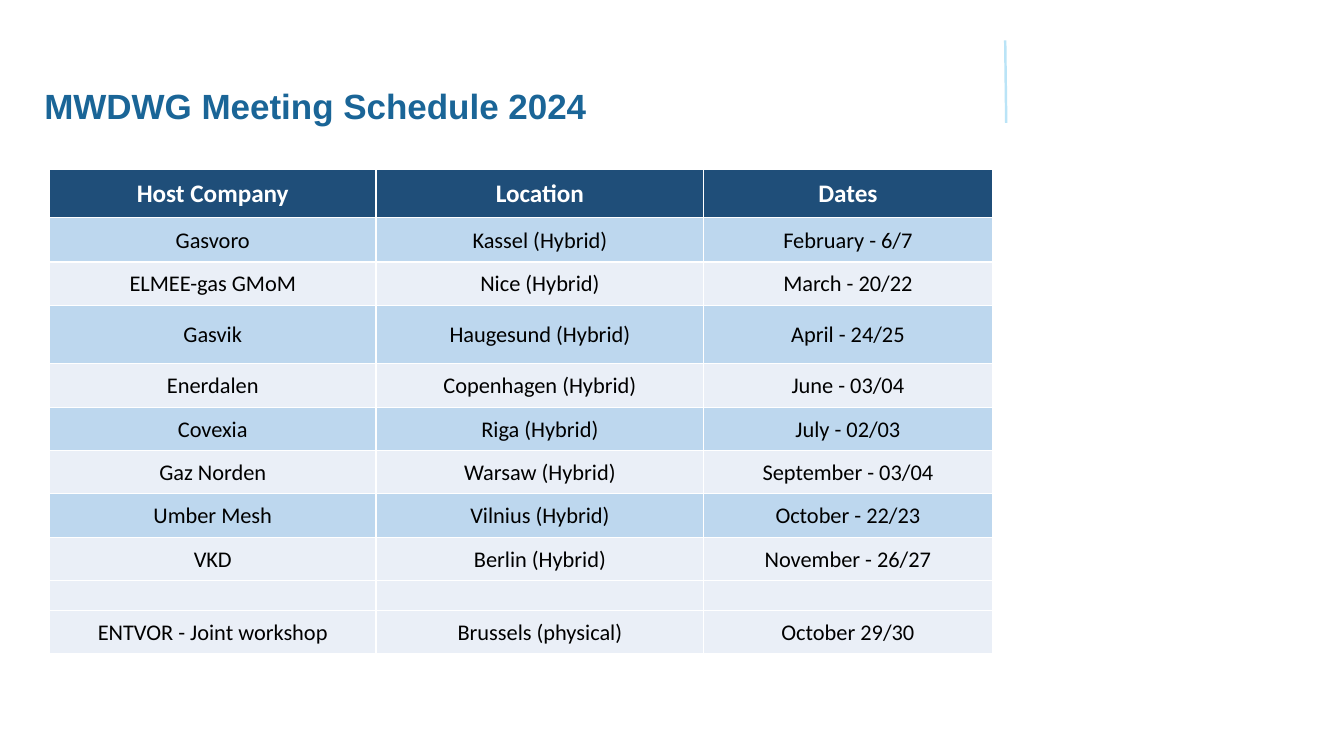
from dataclasses import dataclass

from lxml.etree import SubElement
from pptx import Presentation
from pptx.dml.color import RGBColor as RGB
from pptx.enum.shapes import MSO_CONNECTOR as CONN
from pptx.enum.text import MSO_ANCHOR as ANCHOR, PP_ALIGN as ALIGN
from pptx.oxml.ns import qn
from pptx.util import Inches, Pt


@dataclass(frozen=True)
class Theme:
    title: str = "1A6597"
    accent: str = "BAE4F7"
    header: str = "1F4E79"
    band: str = "BDD7EE"
    light: str = "EAEFF7"
    white: str = "FFFFFF"
    black: str = "000000"
    title_font: str = "Arial"
    table_font: str = "Calibri"
    title_size: float = 25
    header_size: float = 18
    body_size: float = 16


@dataclass(frozen=True)
class Meeting:
    host: str = ""
    location: str = ""
    dates: str = ""
    height: float = 0.43


THEME = Theme()
HEADER = Meeting("Host Company", "Location", "Dates", 0.48)
MEETINGS = [
    Meeting("Gasvoro", "Kassel (Hybrid)", "February - 6/7", 0.44),
    Meeting("ELMEE-gas GMoM", "Nice (Hybrid)", "March - 20/22"),
    Meeting("Gasvik", "Haugesund (Hybrid)", "April - 24/25", 0.58),
    Meeting("Enerdalen", "Copenhagen (Hybrid)", "June - 03/04"),
    Meeting("Covexia", "Riga (Hybrid)", "July - 02/03"),
    Meeting("Gaz Norden", "Warsaw (Hybrid)", "September - 03/04"),
    Meeting("Umber Mesh", "Vilnius (Hybrid)", "October - 22/23"),
    Meeting("VKD", "Berlin (Hybrid)", "November - 26/27"),
    Meeting(height=0.3),
    Meeting("ENTVOR - Joint workshop", "Brussels (physical)", "October 29/30"),
]
COLUMNS = [3.24, 3.25, 2.86]


def set_attrs(obj, attrs: dict) -> None:
    for name, value in attrs.items():
        setattr(obj, name, value)


def style_run(r, font: str, size: float, color: str, bold: bool) -> None:
    set_attrs(r.font, {"name": font, "size": Pt(size), "bold": bold})
    r.font.color.rgb = RGB.from_string(color)


def add_borders(cell, color: str) -> None:
    tc_pr = cell._tc.get_or_add_tcPr()
    for side in ("a:lnL", "a:lnR", "a:lnT", "a:lnB"):
        ln = SubElement(tc_pr, qn(side), w=str(Pt(1)))
        SubElement(SubElement(ln, qn("a:solidFill")), qn("a:srgbClr"), val=color)


def fill_cell(cell, text: str, fill: str, is_header: bool) -> None:
    add_borders(cell, THEME.white)
    cell.fill.solid()
    cell.fill.fore_color.rgb = RGB.from_string(fill)
    inset = Inches(0.01)
    set_attrs(cell, {"margin_left": inset, "margin_right": inset, "margin_top": inset,
                     "margin_bottom": 0, "vertical_anchor": ANCHOR.MIDDLE})
    p = cell.text_frame.paragraphs[0]
    p.alignment = ALIGN.CENTER
    size = THEME.header_size if is_header else THEME.body_size
    if text:
        r = p.add_run()
        r.text = text
        style_run(r, THEME.table_font, size,
                  THEME.white if is_header else THEME.black, is_header)
    else:
        # Keeps an empty row at its low height
        SubElement(p._p, qn("a:endParaRPr"), sz=str(int(size * 100)))


def row_fill(index: int, meeting: Meeting) -> str:
    if index == 0:
        return THEME.header
    return THEME.light if index % 2 == 0 or not meeting.host else THEME.band


def add_title(s, text: str) -> None:
    sp = s.shapes.title
    set_attrs(sp, {"left": Inches(0.34), "top": Inches(0.84),
                   "width": Inches(12.7), "height": Inches(0.47)})
    tf = sp.text_frame
    set_attrs(tf, {"word_wrap": True, "vertical_anchor": ANCHOR.MIDDLE})
    p = tf.paragraphs[0]
    set_attrs(p, {"alignment": ALIGN.LEFT, "line_spacing": 0.9})
    r = p.add_run()
    r.text = text
    style_run(r, THEME.title_font, THEME.title_size, THEME.title, True)


def add_divider(s) -> None:
    line = s.shapes.add_connector(CONN.STRAIGHT, Inches(9.97), Inches(0.4),
                                  Inches(9.98), Inches(1.22))
    line.line.width = Pt(1.75)
    line.line.color.rgb = RGB.from_string(THEME.accent)
    SubElement(line._element.spPr, qn("a:effectLst"))


def add_schedule(s, rows: list[Meeting]) -> None:
    table = s.shapes.add_table(
        len(rows), len(COLUMNS), Inches(0.49), Inches(1.68),
        Inches(sum(COLUMNS)), Inches(sum(m.height for m in rows))).table
    for column, width in zip(table.columns, COLUMNS):
        column.width = Inches(width)
    for i, m in enumerate(rows):
        table.rows[i].height = Inches(m.height)
        for j, text in enumerate((m.host, m.location, m.dates)):
            fill_cell(table.cell(i, j), text, row_fill(i, m), i == 0)


def main() -> None:
    prs = Presentation()
    set_attrs(prs, {"slide_width": Inches(13.33), "slide_height": Inches(7.5)})
    s = prs.slides.add_slide(prs.slide_layouts[5])
    # Heading and divider
    add_divider(s)
    add_title(s, "MWDWG Meeting Schedule 2024")
    # Meeting table
    add_schedule(s, [HEADER, *MEETINGS])
    prs.save("out.pptx")


if __name__ == "__main__":
    main()
